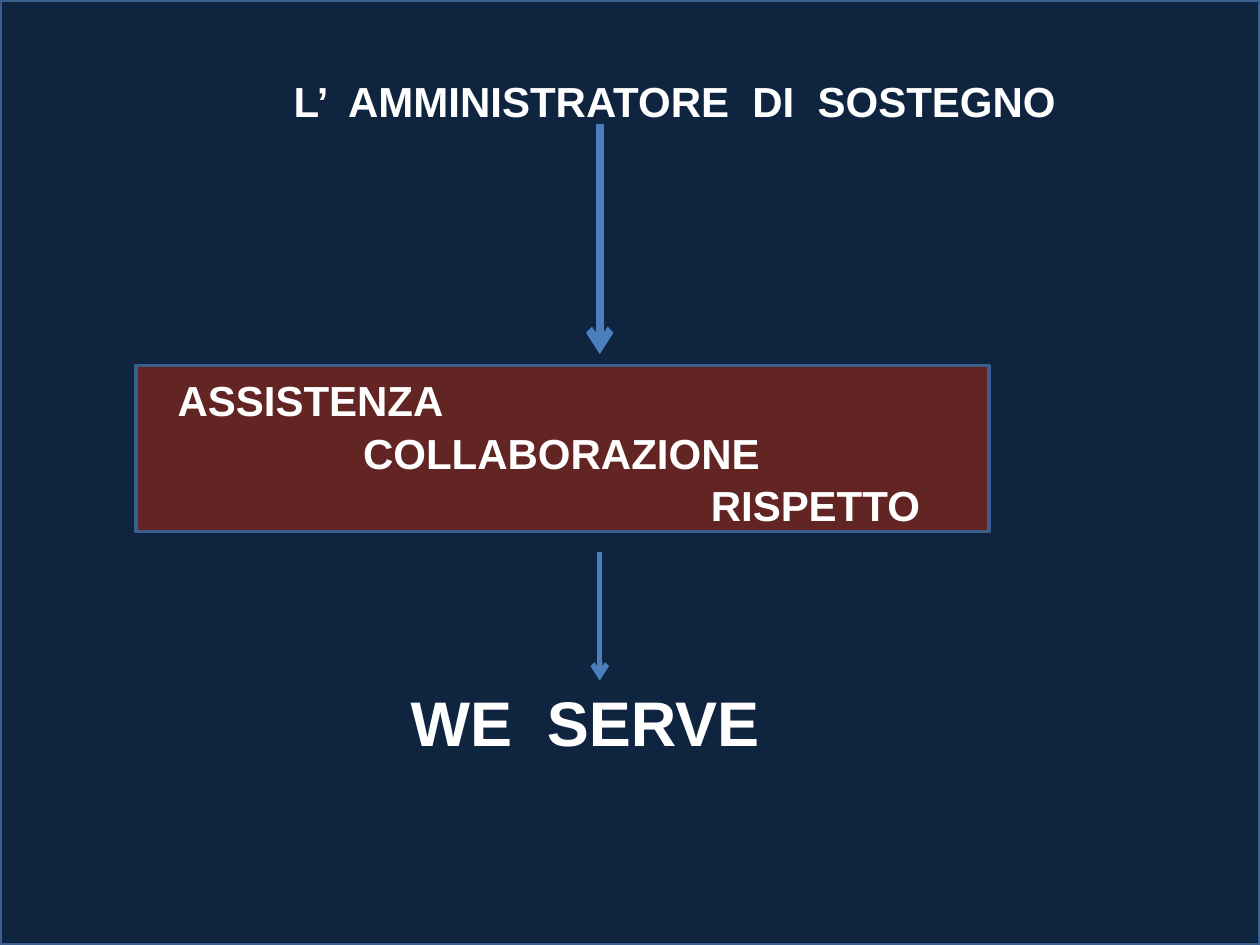
from pptx import Presentation, util as u
from pptx.dml.color import RGBColor
from pptx.enum import shapes, text
from pptx.oxml.ns import qn
from lxml import etree

NAVY, MAROON, WHITE = "0F243E", "632523", "FFFFFF"
BORDER, ARROW = "3A5F8C", "4B7EBC"


def color(fmt, hex_rgb):
    fmt.rgb = RGBColor.from_string(hex_rgb)


def add_box(s, x, y, w, h, fill):
    sp = s.shapes.add_shape(shapes.MSO_SHAPE.RECTANGLE,
                            u.Cm(x), u.Cm(y), u.Cm(w), u.Cm(h))
    sp.shadow.inherit = False
    sp.fill.solid()
    color(sp.fill.fore_color, fill)
    color(sp.line.color, BORDER)
    sp.line.width = u.Pt(2)
    return sp


def add_arrow(s, x, y1, y2, width):
    cx = s.shapes.add_connector(shapes.MSO_CONNECTOR.STRAIGHT,
                                u.Cm(x), u.Cm(y1), u.Cm(x), u.Cm(y2))
    color(cx.line.color, ARROW)
    cx.line.width = u.Pt(width)
    etree.SubElement(cx.line._get_or_add_ln(), qn("a:tailEnd"), type="arrow")
    etree.SubElement(cx._element.spPr, qn("a:effectLst"))


def place(sp, x, y, w, h):
    sp.left, sp.top, sp.width, sp.height = (u.Cm(v) for v in (x, y, w, h))


def write(sp, content, size, anchor=text.MSO_ANCHOR.TOP):
    tf = sp.text_frame
    tf.text = content
    tf.word_wrap = True
    tf.auto_size = text.MSO_AUTO_SIZE.NONE
    tf.vertical_anchor = anchor
    tf.margin_left = tf.margin_right = tf.margin_top = tf.margin_bottom = 0
    for p in tf.paragraphs:
        p.alignment = text.PP_ALIGN.LEFT
        for r in p.runs:
            r.font.name = "Arial"
            r.font.size = u.Pt(size)
            r.font.bold = True
            color(r.font.color, WHITE)
    return tf


def main():
    prs = Presentation()
    prs.slide_width, prs.slide_height = u.Cm(25.4), u.Cm(19.05)
    s = prs.slides.add_slide(prs.slide_layouts[5])

    # Framed background
    add_box(s, 0, 0, 25.4, 19.05, NAVY)

    # Title, brought in front of the background
    title = s.shapes.title
    s.shapes._spTree.append(title._element)
    place(title, 5.92, 1.53, 16.5, 1)
    write(title, "L’  AMMINISTRATORE  DI  SOSTEGNO", 24)

    # Arrows
    add_arrow(s, 12.09, 2.51, 7.14, 4.5)
    add_arrow(s, 12.09, 11.13, 13.72, 3)

    # Values, stepping to the right
    steps = {"ASSISTENZA": 0.84, "COLLABORAZIONE": 4.58, "RISPETTO": 11.59}
    values = add_box(s, 2.74, 7.37, 17.2, 3.35, MAROON)
    tf = write(values, "\n".join(steps), 24, text.MSO_ANCHOR.MIDDLE)
    tf.margin_top = u.Cm(0.16)
    for p, indent in zip(tf.paragraphs, steps.values()):
        p._p.get_or_add_pPr().set("marL", str(u.Cm(indent)))
        p.space_after = u.Pt(1.2)

    # Motto
    motto = s.shapes.add_textbox(u.Cm(8.28), u.Cm(13.77), u.Cm(8), u.Cm(1.5))
    write(motto, "WE  SERVE", 36)

    prs.save("out.pptx")


if __name__ == "__main__":
    main()
